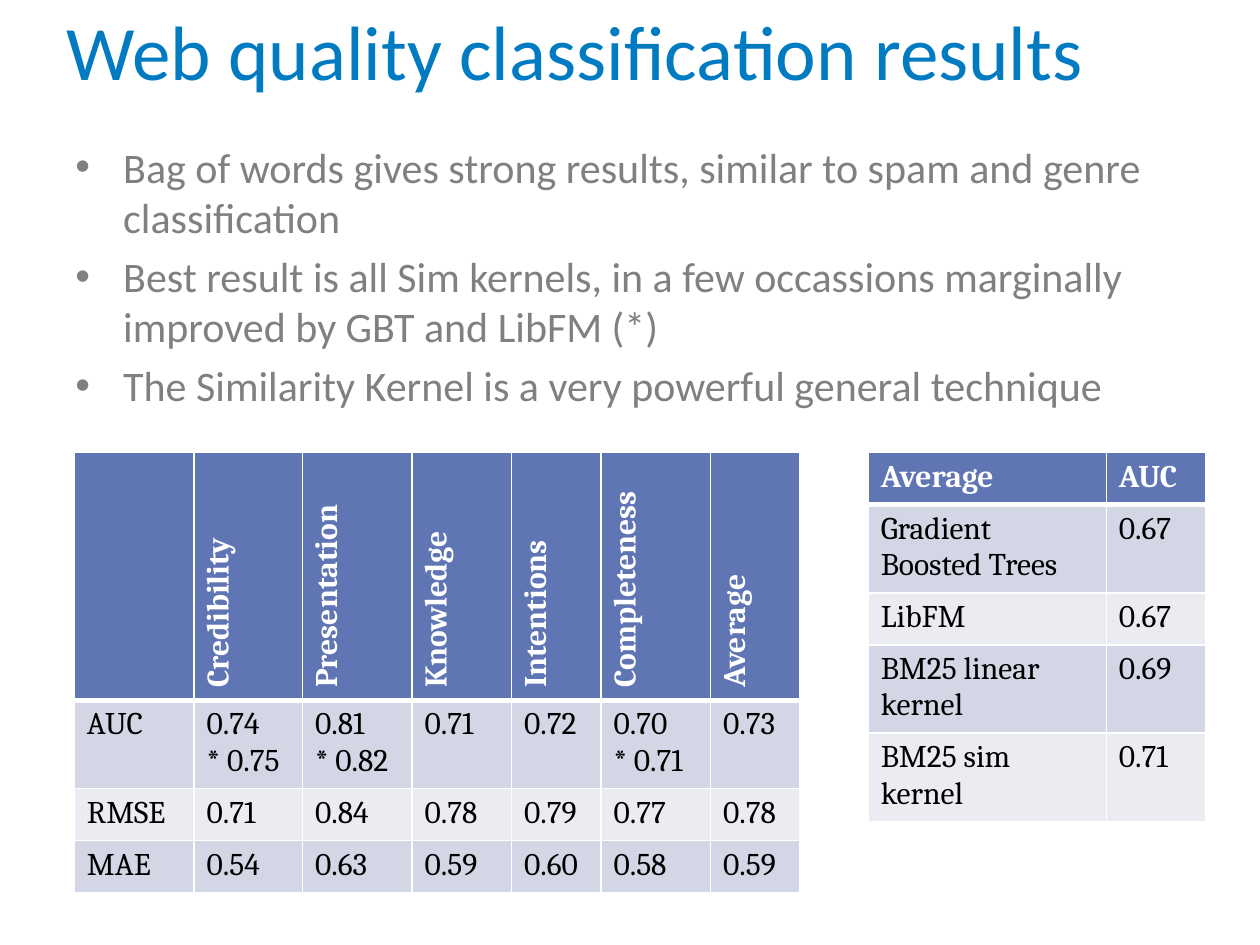
"""Build the slide of web quality classification results."""
from lxml.etree import SubElement
from pptx import Presentation
from pptx.dml.color import RGBColor
from pptx.enum.text import MSO_ANCHOR
from pptx.oxml.ns import qn
from pptx.util import Inches, Pt

COLORS = {"title": "007BC2", "body": "808080", "header": "6076B4", "odd": "D2D6E5",
          "even": "EAECF2", "light": "FFFFFF", "dark": "000000"}
FORMATS = {
    "title": {"name": "Calibri", "size": Pt(44), "bold": False},
    "body": {"name": "Calibri", "size": Pt(24), "bold": False},
    "light": {"name": "Cambria", "size": Pt(18), "bold": True},
    "dark": {"name": "Cambria", "size": Pt(18), "bold": False},
}
BULLETS = [
    "Bag of words gives strong results, similar to spam and genre classification",
    "Best result is all Sim kernels, in a few occassions marginally improved by GBT and LibFM (*)",
    "The Similarity Kernel is a very powerful general technique",
]
TABLES = [
    {"left": 0.059, "vertical": True,
     "columns": [0.095, 0.086, 0.087, 0.079, 0.071, 0.087, 0.071],
     "rows": [0.262, 0.091, 0.055, 0.055],
     "cells": [
         ["", "Credibility", "Presentation", "Knowledge", "Intentions", "Completeness", "Average"],
         ["AUC", "0.74\n* 0.75", "0.81\n* 0.82", "0.71", "0.72", "0.70\n* 0.71", "0.73"],
         ["RMSE", "0.71", "0.84", "0.78", "0.79", "0.77", "0.78"],
         ["MAE", "0.54", "0.63", "0.59", "0.60", "0.58", "0.59"]]},
    {"left": 0.689, "vertical": False,
     "columns": [0.189, 0.079],
     "rows": [0.055, 0.091, 0.055, 0.091, 0.091],
     "cells": [
         ["Average", "AUC"],
         ["Gradient Boosted Trees", "0.67"],
         ["LibFM", "0.67"],
         ["BM25 linear kernel", "0.69"],
         ["BM25 sim kernel", "0.71"]]},
]


def style_text(frame, role):
    for paragraph in frame.paragraphs:
        for key, value in FORMATS[role].items():
            setattr(paragraph.font, key, value)
        paragraph.font.color.rgb = RGBColor.from_string(COLORS[role])


def add_border(cell, side, points):
    line = SubElement(cell._tc.get_or_add_tcPr(), qn(f"a:ln{side}"), w=str(Pt(points)))
    fill = SubElement(line, qn("a:solidFill"))
    SubElement(fill, qn("a:srgbClr"), val=COLORS["light"])


deck = Presentation()
deck.slide_width, deck.slide_height = Inches(10), Inches(7.5)
width, height = deck.slide_width, deck.slide_height
page = deck.slides.add_slide(deck.slide_layouts[6])

title = page.shapes.add_textbox(
    int(width * 0.043), int(height * 0.001), int(width * 0.913), int(height * 0.107)).text_frame
title.word_wrap = True
title.vertical_anchor = MSO_ANCHOR.BOTTOM
title.text = "Web quality classification results"
title.paragraphs[0].line_spacing = Pt(58)
style_text(title, "title")

body = page.shapes.add_textbox(
    int(width * 0.05), int(height * 0.143), int(width * 0.9), int(height * 0.819)).text_frame
body.word_wrap = True
body.text = "\n".join(BULLETS)
for index, paragraph in enumerate(body.paragraphs):
    properties = paragraph._p.get_or_add_pPr()
    properties.set("marL", str(Inches(0.38)))
    properties.set("indent", str(-Inches(0.38)))
    SubElement(properties, qn("a:buFont"), typeface="Arial")
    SubElement(properties, qn("a:buChar"), char="•")
    paragraph.space_before = Pt(4.8 if index else 0)
style_text(body, "body")

for data in TABLES:
    columns, rows = data["columns"], data["rows"]
    table = page.shapes.add_table(
        len(rows), len(columns), int(width * data["left"]), int(height * 0.479),
        int(width * sum(columns)), int(height * sum(rows))).table
    for column, share in zip(table.columns, columns):
        column.width = int(width * share)
    for row, share in zip(table.rows, rows):
        row.height = int(height * share)
    for row_index, values in enumerate(data["cells"]):
        for column_index, value in enumerate(values):
            cell = table.cell(row_index, column_index)
            cell.text = value
            is_header = row_index == 0
            style_text(cell.text_frame, "light" if is_header else "dark")
            if is_header and data["vertical"] and value:
                cell._tc.get_or_add_tcPr().set("vert", "vert270")
            add_border(cell, "L", 1)
            add_border(cell, "R", 1)
            add_border(cell, "T", 3 if row_index == 1 else 1)
            add_border(cell, "B", 3 if is_header else 1)
            band = "header" if is_header else "odd" if row_index % 2 else "even"
            cell.fill.solid()
            cell.fill.fore_color.rgb = RGBColor.from_string(COLORS[band])

deck.save("out.pptx")
